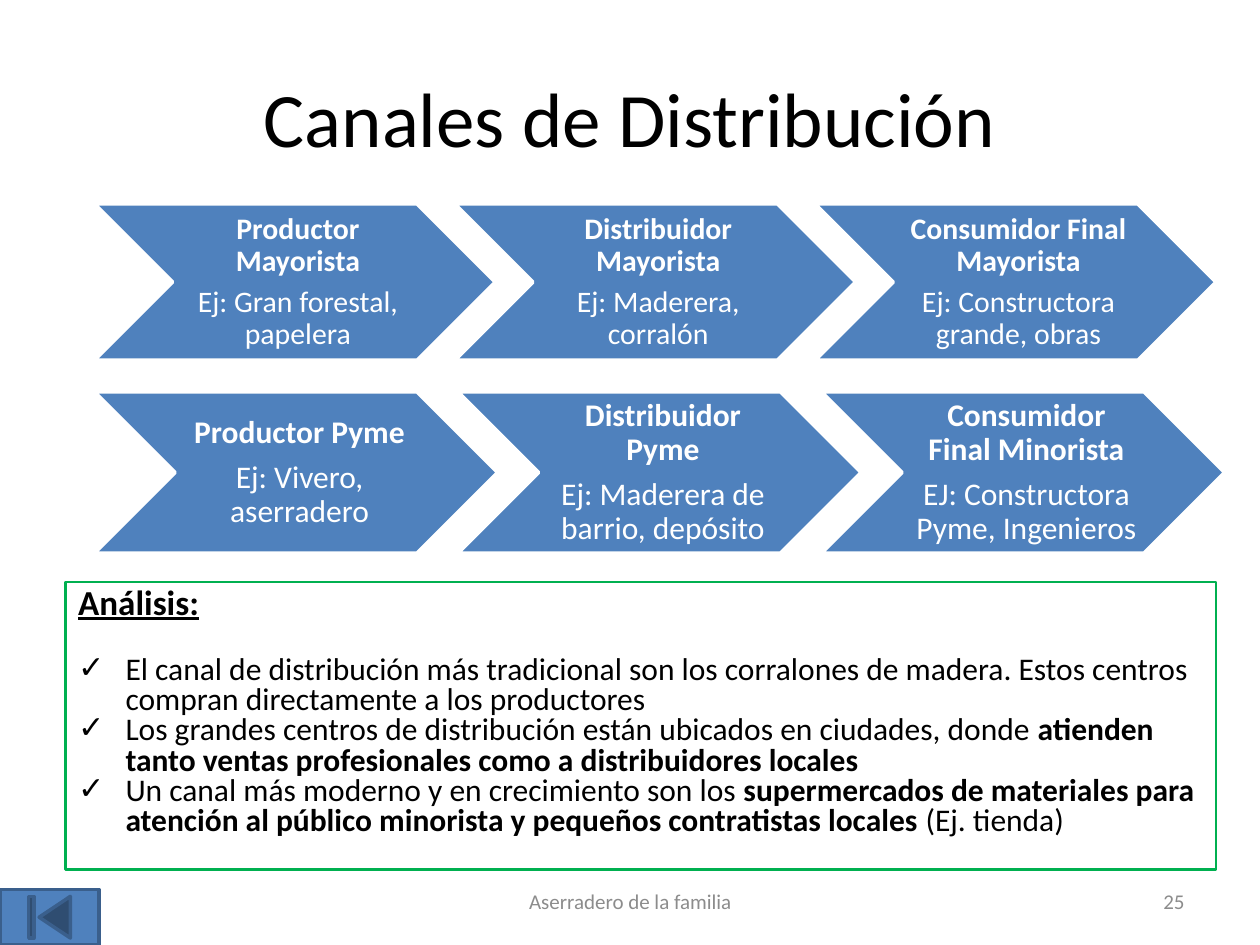
from dataclasses import dataclass

from lxml.etree import SubElement
from pptx import Presentation
from pptx.dml.color import RGBColor
from pptx.enum.shapes import MSO_SHAPE
from pptx.enum.text import MSO_ANCHOR, MSO_AUTO_SIZE, PP_ALIGN
from pptx.oxml.ns import qn
from pptx.util import Pt

BLACK = RGBColor(0x00, 0x00, 0x00)
WHITE = RGBColor(0xFF, 0xFF, 0xFF)
GRAY = RGBColor(0x8C, 0x8C, 0x8C)
BLUE = RGBColor(0x4F, 0x81, 0xBD)
DARK_BLUE = RGBColor(0x3A, 0x5F, 0x8C)
GREEN = RGBColor(0x00, 0xB0, 0x50)
FONT = "Calibri"


@dataclass
class Channel:
    top: float
    width: float
    height: float
    pitch: float
    size: float
    gap: float
    insets: tuple[float, float]
    steps: list[tuple[str, str]]


@dataclass
class Label:
    left: float
    width: float
    text: str
    align: PP_ALIGN


CHANNEL_LEFT = 54
CHANNELS = [
    Channel(116.6, 229, 89.3, 205.9, 17, 5, (5, 1.5), [
        ("Productor Mayorista", "Ej: Gran forestal, papelera"),
        ("Distribuidor Mayorista", "Ej: Maderera, corralón"),
        ("Consumidor Final Mayorista", "Ej: Constructora grande, obras"),
    ]),
    Channel(223.9, 230.4, 92.2, 207.7, 18, 6, (6, 2), [
        ("Productor Pyme", "Ej: Vivero, aserradero"),
        ("Distribuidor Pyme", "Ej: Maderera de barrio, depósito"),
        ("Consumidor\vFinal Minorista", "EJ: Constructora Pyme, Ingenieros"),
    ]),
]

# Each point is a list of (text, bold) spans.
POINTS = [
    [("El canal de distribución más tradicional son los corralones de madera. "
      "Estos centros compran directamente a los productores", False)],
    [("Los grandes centros de distribución están ubicados en ciudades, donde ", False),
     ("atienden tanto ventas profesionales como a distribuidores locales", True)],
    [("Un canal más moderno y en crecimiento son los ", False),
     ("supermercados de materiales para atención al público minorista y "
      "pequeños contratistas locales ", True),
     ("(Ej. tienda)", False)],
]

LABELS = [
    Label(246.2, 228.2, "Aserradero de la familia", PP_ALIGN.CENTER),
    Label(516.2, 167.8, "25", PP_ALIGN.RIGHT),
]


def apply(target, **values) -> None:
    for name, value in values.items():
        setattr(target, name, value)


def place(shape, left: float, top: float, width: float, height: float) -> None:
    apply(shape, left=Pt(left), top=Pt(top), width=Pt(width), height=Pt(height))


def set_font(font, size: float, color: RGBColor, **values) -> None:
    apply(font, name=FONT, size=Pt(size), **values)
    font.color.rgb = color


def set_bullet(para, char: str | None, indent: float) -> None:
    properties = para._p.get_or_add_pPr()
    properties.set("marL", str(Pt(indent)))
    properties.set("indent", str(-Pt(indent)))
    if char:
        SubElement(properties, qn("a:buChar")).set("char", char)
    else:
        SubElement(properties, qn("a:buNone"))


def add_filled_shape(page, kind, box, line_color: RGBColor):
    shape = page.shapes.add_shape(kind, *map(Pt, box))
    shape.shadow.inherit = False
    shape.fill.solid()
    shape.fill.fore_color.rgb = BLUE
    shape.line.color.rgb = line_color
    shape.line.width = Pt(2)
    return shape


def add_channel(page, channel: Channel) -> None:
    left_inset, inset = map(Pt, channel.insets)
    for index, step in enumerate(channel.steps):
        box = (CHANNEL_LEFT + index * channel.pitch, channel.top,
               channel.width, channel.height)
        frame = add_filled_shape(page, MSO_SHAPE.CHEVRON, box, WHITE).text_frame
        apply(frame, word_wrap=True, vertical_anchor=MSO_ANCHOR.MIDDLE,
              margin_left=left_inset, margin_right=inset,
              margin_top=inset, margin_bottom=inset)
        for number, text in enumerate(step):
            para = frame.add_paragraph() if number else frame.paragraphs[0]
            para.text = text
            apply(para, alignment=PP_ALIGN.CENTER, line_spacing=0.9,
                  space_before=Pt(channel.gap * number))
            for span in para.runs:
                set_font(span.font, channel.size, WHITE, bold=number == 0)


def fill_analysis(body) -> None:
    place(body, 37.5, 332.6, 657.4, 164.2)
    body.line.color.rgb = GREEN
    body.line.width = Pt(1.5)
    frame = body.text_frame
    apply(frame, word_wrap=True, auto_size=MSO_AUTO_SIZE.NONE,
          vertical_anchor=MSO_ANCHOR.TOP)

    heading = frame.paragraphs[0]
    set_bullet(heading, None, 0)
    apply(heading, line_spacing=0.8, space_before=Pt(0), space_after=Pt(19.5))
    span = heading.add_run()
    span.text = "Análisis:"
    set_font(span.font, 20, BLACK, bold=True, underline=True)

    for point in POINTS:
        para = frame.add_paragraph()
        set_bullet(para, "✓", 27)
        apply(para, line_spacing=0.8, space_before=Pt(0))
        for text, bold in point:
            span = para.add_run()
            span.text = text
            set_font(span.font, 18, BLACK, bold=bold)


def add_label(page, label: Label) -> None:
    box = page.shapes.add_textbox(Pt(label.left), Pt(500.5), Pt(label.width), Pt(28.8))
    apply(box.text_frame, word_wrap=True, vertical_anchor=MSO_ANCHOR.MIDDLE)
    para = box.text_frame.paragraphs[0]
    apply(para, text=label.text, alignment=label.align)
    set_font(para.runs[0].font, 12, GRAY)


def main() -> None:
    deck = Presentation()
    apply(deck, slide_width=Pt(720), slide_height=Pt(540))
    page = deck.slides.add_slide(deck.slide_layouts[1])

    title = page.shapes.title
    place(title, 36, 21.6, 648, 90)
    title.text_frame.vertical_anchor = MSO_ANCHOR.MIDDLE
    para = title.text_frame.paragraphs[0]
    apply(para, text="Canales de Distribución", alignment=PP_ALIGN.CENTER)
    set_font(para.runs[0].font, 44, BLACK)

    fill_analysis(page.placeholders[1])
    for label in LABELS:
        add_label(page, label)
    for channel in CHANNELS:
        add_channel(page, channel)
    add_filled_shape(page, MSO_SHAPE.ACTION_BUTTON_BEGINNING,
                     (0, 508.3, 56.7, 31.7), DARK_BLUE)
    deck.save("out.pptx")


if __name__ == "__main__":
    main()
